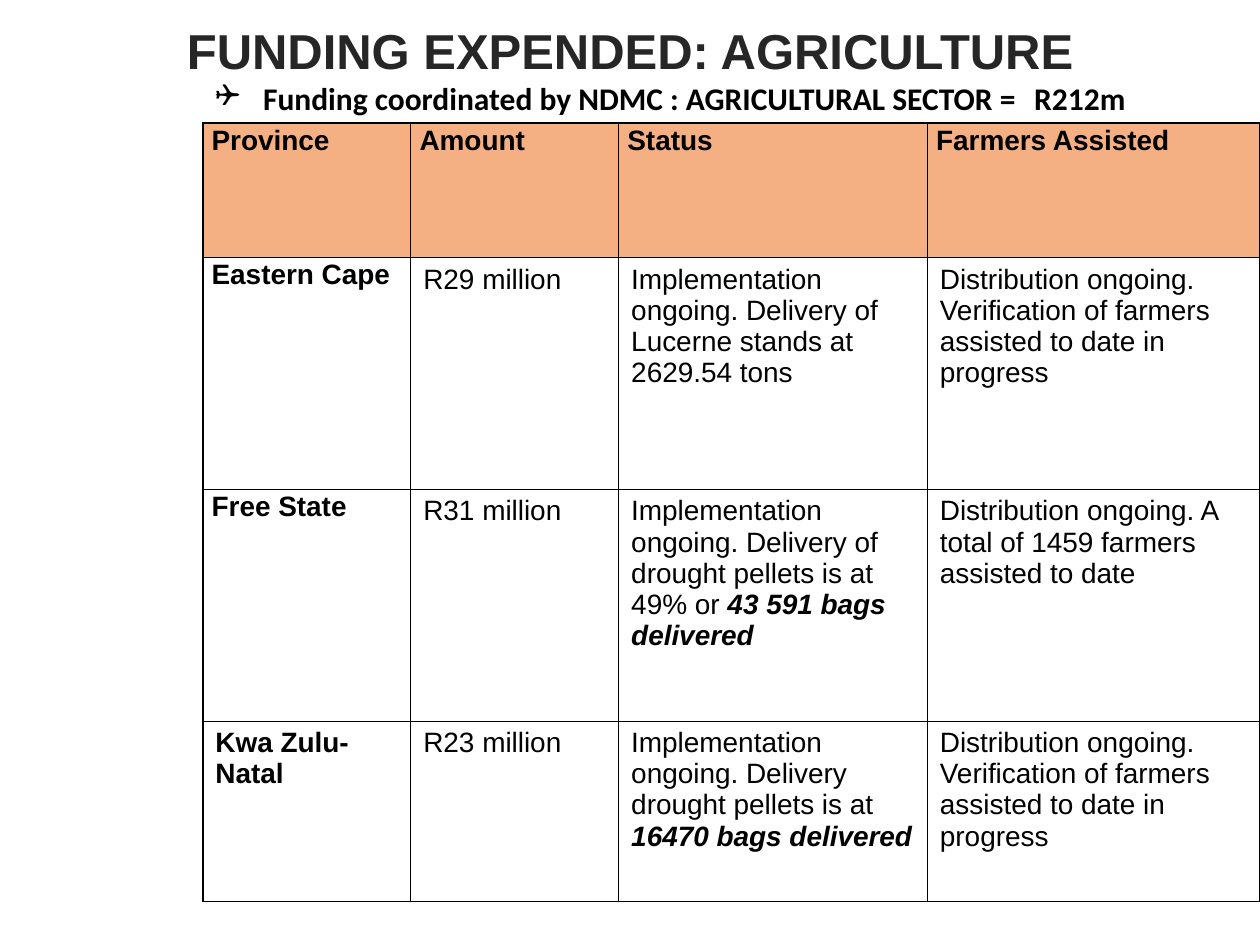
from dataclasses import dataclass
from typing import Any

from lxml import etree
from pptx import Presentation
from pptx.dml.color import RGBColor
from pptx.enum.text import MSO_ANCHOR, MSO_AUTO_SIZE, PP_ALIGN
from pptx.oxml.ns import qn
from pptx.util import Inches, Pt

BOTTOM, TOP = MSO_ANCHOR.BOTTOM, MSO_ANCHOR.TOP
CENTER, LEFT, JUSTIFY = PP_ALIGN.CENTER, PP_ALIGN.LEFT, PP_ALIGN.JUSTIFY
WIDE, HIGH = Inches(10), Inches(7.5)


@dataclass(frozen=True)
class Theme:
    black: str = "000000"
    dark: str = "262626"
    white: str = "FFFFFF"
    head: str = "F4B083"
    main: str = "Arial"
    note: str = "Calibri"
    title_size: int = 28
    note_size: int = 18
    cell_size: int = 16


@dataclass(frozen=True)
class Cell:
    text: str
    strong: str = ""      # bold italic ending
    bold: bool = False
    tight: bool = False   # small margins, justified text
    fill: str = Theme.white


THEME = Theme()
COLS = (1.65, 1.65, 2.45, 2.64)
ROWS = (1.07, 1.84, 1.84, 1.43)
EDGE, TABLE_TOP = 0.161, 0.13   # shares of the slide's size


def label(text: str) -> Cell:
    return Cell(text, bold=True, tight=True)


HEADS = ("Province", "Amount", "Status", "Farmers Assisted")
CHECK = ("Distribution ongoing. Verification of farmers "
         "assisted to date in progress")
GRID = (
    tuple(Cell(h, bold=True, tight=True, fill=THEME.head) for h in HEADS),
    (label("Eastern Cape"), Cell("R29 million"),
     Cell("Implementation ongoing. Delivery of Lucerne stands at 2629.54 tons"),
     Cell(CHECK)),
    (label("Free State"), Cell("R31 million"),
     Cell("Implementation ongoing. Delivery of drought pellets is at 49% or ",
          "43 591 bags delivered"),
     Cell("Distribution ongoing. A total of 1459 farmers assisted to date")),
    (Cell("Kwa Zulu-Natal", bold=True), Cell("R23 million"),
     Cell("Implementation ongoing. Delivery drought pellets is at ",
          "16470 bags delivered"),
     Cell(CHECK)),
)


def apply(item: Any, **values: Any) -> None:
    for name, value in values.items():
        setattr(item, name, value)


def place(shape: Any, x: float, y: float, w: float, h: float) -> None:
    """Set the box of a shape from shares of the slide."""
    apply(shape, left=int(WIDE * x), top=int(HIGH * y),
          width=int(WIDE * w), height=int(HIGH * h))


def write(para: Any, text: str, size: int, font: str, color: str,
          bold: bool = False, italic: bool = False) -> None:
    run = para.add_run()
    run.text = text
    apply(run.font, size=Pt(size), name=font, bold=bold, italic=italic)
    run.font.color.rgb = RGBColor.from_string(color)


def border(cell: Any) -> None:
    props = cell._tc.get_or_add_tcPr()
    for spot, side in enumerate(("lnL", "lnR", "lnT", "lnB")):
        line = etree.Element(qn(f"a:{side}"), w=str(Pt(1)))
        fill = etree.SubElement(line, qn("a:solidFill"))
        etree.SubElement(fill, qn("a:srgbClr"), val=THEME.black)
        props.insert(spot, line)


def draw_cell(cell: Any, data: Cell) -> None:
    cell.fill.solid()
    cell.fill.fore_color.rgb = RGBColor.from_string(data.fill)
    border(cell)
    cell.vertical_anchor = TOP
    para = cell.text_frame.paragraphs[0]
    para.alignment = LEFT
    if data.tight:
        apply(cell, margin_left=Inches(0.07), margin_right=Inches(0.07),
              margin_top=0, margin_bottom=0)
        apply(para, alignment=JUSTIFY, line_spacing=1.07, space_after=Pt(12))
    look = (THEME.cell_size, THEME.main, THEME.black)
    write(para, data.text, *look, bold=data.bold)
    if data.strong:
        write(para, data.strong, *look, bold=True, italic=True)


def draw_title(shape: Any, text: str) -> None:
    place(shape, 0, 0.028, 1, 0.063)
    frame = shape.text_frame
    apply(frame, vertical_anchor=BOTTOM, word_wrap=True,
          auto_size=MSO_AUTO_SIZE.NONE)
    para = frame.paragraphs[0]
    para.alignment = CENTER
    write(para, text, THEME.title_size, THEME.main, THEME.dark, bold=True)


def draw_note(slide: Any, text: str) -> None:
    box = slide.shapes.add_textbox(0, 0, 0, 0)
    place(box, EDGE, 0.077, 0.809, 0.054)
    apply(box.text_frame, word_wrap=True,
          auto_size=MSO_AUTO_SIZE.SHAPE_TO_FIT_TEXT)
    para = box.text_frame.paragraphs[0]
    para.alignment = JUSTIFY
    props = para._p.get_or_add_pPr()
    props.set("marL", str(Inches(0.38)))
    props.set("indent", str(-Inches(0.38)))
    etree.SubElement(props, qn("a:buFont"), typeface="Wingdings")
    etree.SubElement(props, qn("a:buChar"), char="❑")
    write(para, text, THEME.note_size, THEME.note, THEME.black, bold=True)


def draw_table(slide: Any) -> None:
    frame = slide.shapes.add_table(
        len(ROWS), len(COLS), int(WIDE * EDGE), int(HIGH * TABLE_TOP),
        Inches(sum(COLS)), Inches(sum(ROWS)))
    table = frame.table
    apply(table, first_row=False, horz_banding=False)
    for col, width in zip(table.columns, COLS):
        col.width = Inches(width)
    for row, height, line in zip(table.rows, ROWS, GRID):
        row.height = Inches(height)
        for cell, data in zip(row.cells, line):
            draw_cell(cell, data)


def main() -> None:
    deck = Presentation()
    apply(deck, slide_width=WIDE, slide_height=HIGH)
    slide = deck.slides.add_slide(deck.slide_layouts[5])  # title only
    draw_title(slide.shapes.title, "FUNDING EXPENDED: AGRICULTURE")
    draw_note(slide, "Funding coordinated by NDMC : "
                     "AGRICULTURAL SECTOR =\tR212m ")
    draw_table(slide)
    deck.save("out.pptx")


if __name__ == "__main__":
    main()
